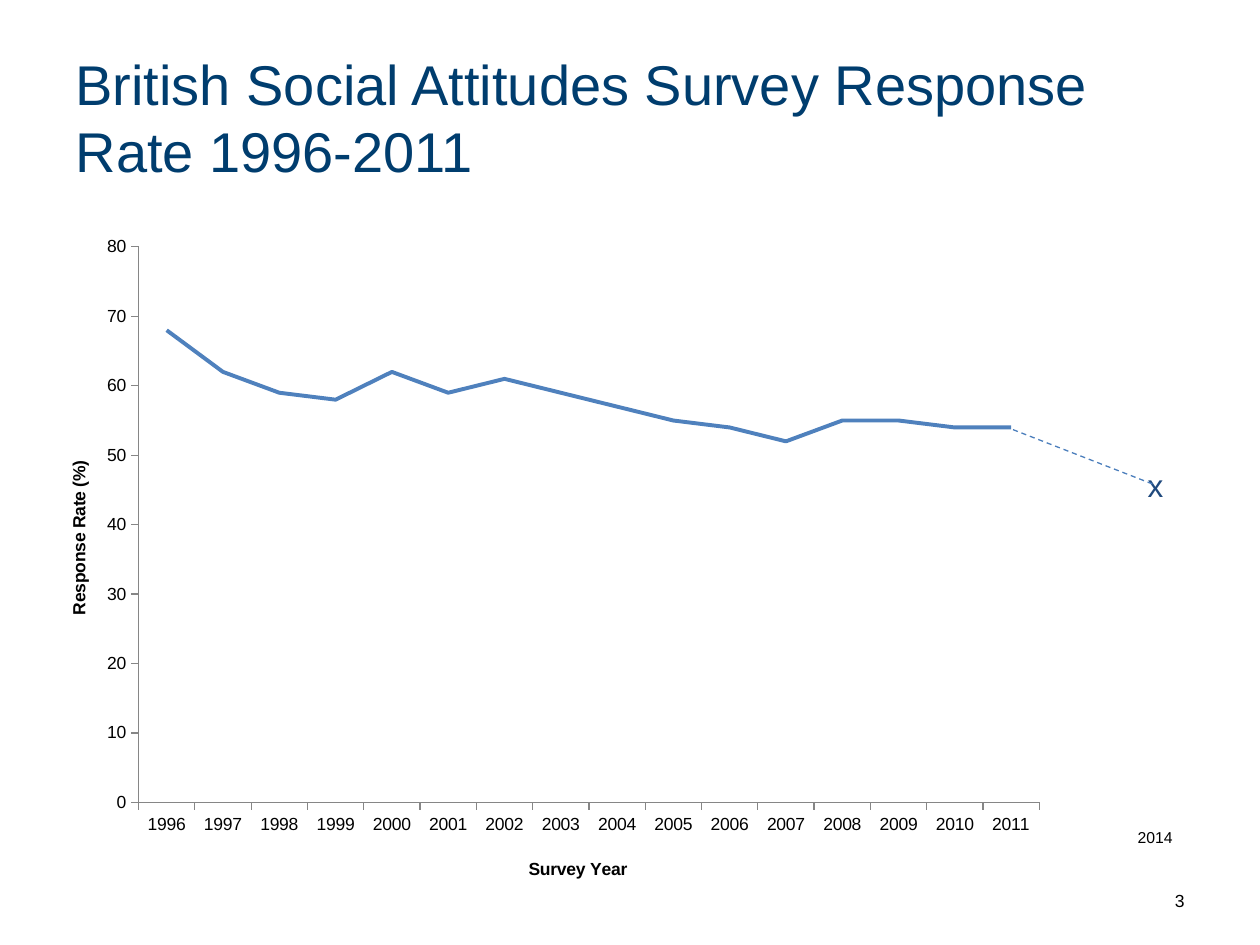
from lxml.etree import SubElement
from pptx import Presentation
from pptx.chart.data import CategoryChartData
from pptx.dml.color import RGBColor
from pptx.enum.chart import XL_CHART_TYPE, XL_TICK_MARK
from pptx.enum.dml import MSO_LINE
from pptx.enum.shapes import MSO_CONNECTOR
from pptx.enum.text import MSO_ANCHOR, MSO_AUTO_SIZE, PP_ALIGN
from pptx.oxml import parse_xml
from pptx.oxml.ns import nsdecls, qn
from pptx.util import Inches, Pt

# Content
TITLE = "British Social Attitudes Survey Response Rate 1996-2011"
FIRST_YEAR = 1996
RATES = [68, 62, 59, 58, 62, 59, 61, 59, 57, 55, 54, 52, 55, 55, 54, 54]

# text, box, size, colour, alignment, anchor, wrap
LABELS = [
    ("3", (7.17, 6.95, 2.33, 0.4), 10, "000000", PP_ALIGN.RIGHT, MSO_ANCHOR.MIDDLE, True),
    ("2014", (8.93, 6.52, 0.48, 0.25), 9, "000000", PP_ALIGN.LEFT, MSO_ANCHOR.TOP, False),
    ("x", (9.01, 3.65, 0.33, 0.4), 18, "1F497D", PP_ALIGN.LEFT, MSO_ANCHOR.TOP, False),
]

# Chart frame, plot area and axis title corners, in inches on the slide
CHART = (0.28, 1.78, 8.15, 5.36)
PLOT = (1.1, 1.96, 7.15, 4.41)
AXIS_TITLES = {"Survey Year": (4.17, 6.78), "Response Rate (%)": (0.51, 3.63)}


def inches(values):
    return [Inches(v) for v in values]


def set_font(font, size, color, bold=False):
    font.name = "Arial"
    font.size = Pt(size)
    font.bold = bold
    font.color.rgb = RGBColor.from_string(color)


def layout_xml(left, top, width=None, height=None):
    """Manual layout, as fractions of the chart frame."""
    x0, y0, w, h = CHART
    parts = [("xMode", "edge"), ("yMode", "edge"),
             ("x", round((left - x0) / w, 4)), ("y", round((top - y0) / h, 4))]
    if width:
        parts.insert(0, ("layoutTarget", "inner"))
        parts += [("w", round(width / w, 4)), ("h", round(height / h, 4))]
    body = "".join(f'<c:{tag} val="{val}"/>' for tag, val in parts)
    return parse_xml(f'<c:layout {nsdecls("c")}><c:manualLayout>{body}'
                     "</c:manualLayout></c:layout>")


def place(element, layout, index):
    for old in element.findall(qn("c:layout")):
        element.remove(old)
    element.insert(index, layout)


def add_label(slide, text, box, size, color, align, anchor, wrap):
    tf = slide.shapes.add_textbox(*inches(box)).text_frame
    tf.word_wrap = wrap
    tf.auto_size = MSO_AUTO_SIZE.NONE if wrap else MSO_AUTO_SIZE.SHAPE_TO_FIT_TEXT
    tf.vertical_anchor = anchor
    p = tf.paragraphs[0]
    p.text = text
    p.alignment = align
    set_font(p.font, size, color)


def add_rate_chart(slide):
    data = CategoryChartData()
    data.categories = [str(FIRST_YEAR + i) for i in range(len(RATES))]
    data.add_series("Series 1", RATES)
    chart = slide.shapes.add_chart(XL_CHART_TYPE.LINE, *inches(CHART), data).chart
    chart.has_legend = False
    chart.has_title = False
    set_font(chart.font, 10, "000000")

    plot = chart.plots[0]
    plot.vary_by_categories = False
    series = plot.series[0]
    series.smooth = False
    series.format.line.color.rgb = RGBColor.from_string("4F81BD")
    series.format.line.width = Pt(2.25)

    # Axes
    for axis, text in zip((chart.category_axis, chart.value_axis), AXIS_TITLES):
        axis.has_major_gridlines = False
        axis.major_tick_mark = XL_TICK_MARK.OUTSIDE
        axis.minor_tick_mark = XL_TICK_MARK.NONE
        axis.format.line.color.rgb = RGBColor.from_string("868686")
        axis.format.line.width = Pt(0.75)
        p = axis.axis_title.text_frame.paragraphs[0]
        p.text = text
        set_font(p.font, 10, "000000", bold=True)
    chart.value_axis.minimum_scale = 0
    chart.value_axis.maximum_scale = 80
    chart.value_axis.major_unit = 10

    # Positions of the plot area and the axis titles
    root = chart.element
    place(next(root.iter(qn("c:plotArea"))), layout_xml(*PLOT), 0)
    for title, corner in zip(root.iter(qn("c:title")), AXIS_TITLES.values()):
        place(title, layout_xml(*corner), 1)


def main():
    prs = Presentation()
    prs.slide_width, prs.slide_height = Inches(10), Inches(7.5)
    slide = prs.slides.add_slide(prs.slide_layouts[5])

    # Title
    title = slide.shapes.title
    title.left, title.top, title.width, title.height = inches((0.5, 0.3, 9, 1.25))
    tf = title.text_frame
    tf.word_wrap = True
    tf.vertical_anchor = MSO_ANCHOR.MIDDLE
    p = tf.paragraphs[0]
    p.text = TITLE
    p.alignment = PP_ALIGN.LEFT
    set_font(p.font, 32, "003D6E")

    add_rate_chart(slide)
    for label in LABELS:
        add_label(slide, *label)

    # Dashed projection to 2014
    line = slide.shapes.add_connector(MSO_CONNECTOR.STRAIGHT, *inches((8.04, 3.41, 9.17, 3.85)))
    line.line.color.rgb = RGBColor.from_string("4B7EBC")
    line.line.width = Pt(0.75)
    line.line.dash_style = MSO_LINE.DASH
    SubElement(line.element.spPr, qn("a:effectLst"))

    prs.save("out.pptx")


if __name__ == "__main__":
    main()
